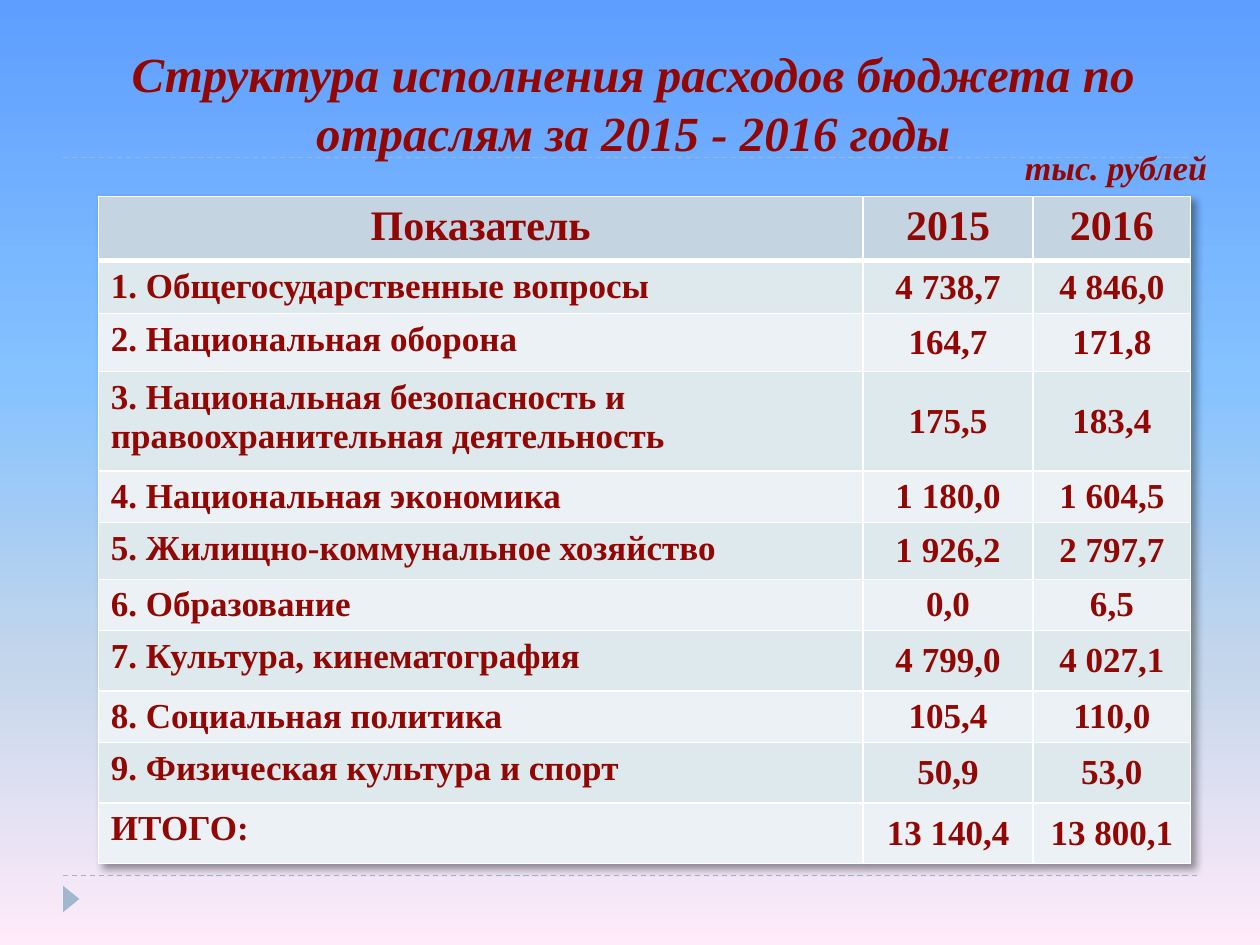
from lxml import etree
from pptx import Presentation
from pptx import util as u
from pptx.dml.color import RGBColor
from pptx.enum import dml, shapes, text
from pptx.oxml import ns

W, H = u.Inches(10), u.Inches(7.5)
FONT = "Times New Roman"
DARK_RED = RGBColor(0x92, 0x07, 0x04)
STEEL = RGBColor(0x9F, 0xB8, 0xCD)
WHITE = RGBColor(0xFF, 0xFF, 0xFF)
BLACK = RGBColor(0, 0, 0)
HEADER = RGBColor(0xC5, 0xD4, 0xE1)
BANDS = [RGBColor(0xEC, 0xF1, 0xF5), RGBColor(0xDD, 0xE9, 0xEC)]
SKY = [
    (0, RGBColor(0x5E, 0x9E, 0xFF)),
    (40, RGBColor(0x85, 0xC2, 0xFF)),
    (70, RGBColor(0xC4, 0xD6, 0xEB)),
    (100, RGBColor(0xFF, 0xEB, 0xFA)),
]
COLS = [6.07, 1.35, 1.25]
ROWS = [0.51, 0.42, 0.46, 0.79, 0.38, 0.45, 0.36, 0.48, 0.31, 0.48, 0.48]
BUDGET = [
    ("Показатель", "2015", "2016"),
    ("1. Общегосударственные вопросы", "4 738,7", "4 846,0"),
    ("2. Национальная оборона", "164,7", "171,8"),
    ("3. Национальная безопасность и правоохранительная деятельность", "175,5", "183,4"),
    ("4. Национальная экономика", "1 180,0", "1 604,5"),
    ("5. Жилищно-коммунальное хозяйство", "1 926,2", "2 797,7"),
    ("6. Образование", "0,0", "6,5"),
    ("7. Культура, кинематография", "4 799,0", "4 027,1"),
    ("8. Социальная политика", "105,4", "110,0"),
    ("9. Физическая культура и спорт", "50,9", "53,0"),
    ("ИТОГО:", "13 140,4", "13 800,1"),
]


def share(x, y, w, h):
    return int(W * x), int(H * y), int(W * w), int(H * h)


def sub(parent, tag, **attrs):
    return etree.SubElement(parent, ns.qn(tag), attrs)


def add_run(tf, words, size, align, italic=False):
    p = tf.paragraphs[0]
    p.alignment = align
    r = p.add_run()
    r.text = words
    f = r.font
    f.name, f.size, f.bold, f.italic = FONT, u.Pt(size), True, italic
    f.color.rgb = DARK_RED


def paint_background(s):
    fill = s.background.fill
    fill.gradient()
    fill.gradient_angle = 270
    stops = s.element.find(".//" + ns.qn("a:gsLst"))
    for gs in list(stops):
        stops.remove(gs)
    for pos, color in SKY:
        gs = sub(stops, "a:gs", pos=str(pos * 1000))
        sub(gs, "a:srgbClr", val=str(color))


def add_rule(s, box):
    x, y, w, h = box
    line = s.shapes.add_connector(shapes.MSO_CONNECTOR.STRAIGHT, x, y, x + w, y + h)
    line.line.color.rgb = STEEL
    line.line.width = u.Pt(0.75)
    line.line.dash_style = dml.MSO_LINE.DASH
    sub(line.element.spPr, "a:effectLst")


def add_marker(s, box):
    sp = s.shapes.add_shape(shapes.MSO_SHAPE.ISOSCELES_TRIANGLE, *box)
    sp.rotation = 90
    sp.shadow.inherit = False
    sp.fill.solid()
    sp.fill.fore_color.rgb = STEEL
    sp.line.fill.background()


def place_title(s, box):
    sp = s.shapes.title
    sp.left, sp.top, sp.width, sp.height = box
    s.shapes.element.append(sp.element)
    tf = sp.text_frame
    tf.word_wrap = True
    tf.auto_size = text.MSO_AUTO_SIZE.NONE
    tf.vertical_anchor = text.MSO_ANCHOR.BOTTOM
    add_run(tf, "Структура исполнения расходов бюджета по отраслям за 2015 - 2016 годы",
            28, text.PP_ALIGN.CENTER, italic=True)


def add_units(s, box):
    tf = s.shapes.add_textbox(*box).text_frame
    tf.word_wrap = True
    tf.vertical_anchor = text.MSO_ANCHOR.MIDDLE
    add_run(tf, "тыс. рублей", 19.5, text.PP_ALIGN.RIGHT, italic=True)


def set_borders(cell, header):
    tc_pr = cell._tc.get_or_add_tcPr()
    for i, side in enumerate("LRTB"):
        width = u.Pt(3 if header and side == "B" else 1)
        ln = etree.Element(ns.qn("a:ln" + side), w=str(int(width)))
        sub(sub(ln, "a:solidFill"), "a:srgbClr", val=str(WHITE))
        tc_pr.insert(i, ln)


def add_table_shadow(tbl):
    effects = etree.Element(ns.qn("a:effectLst"))
    shadow = sub(effects, "a:outerShdw", blurRad=str(u.Pt(4)), dist=str(u.Pt(4)),
                 dir="2700000", algn="tl", rotWithShape="0")
    sub(sub(shadow, "a:srgbClr", val=str(BLACK)), "a:alpha", val="40000")
    tbl.tblPr.insert(0, effects)


def add_budget_table(s, box):
    x, y, w, h = box
    frame = s.shapes.add_table(len(ROWS), len(COLS), x, y, w, h)
    table = frame.table
    add_table_shadow(table._tbl)
    for col, part in zip(table.columns, COLS):
        col.width = int(w * part / sum(COLS))
    for row, part in zip(table.rows, ROWS):
        row.height = int(h * part / sum(ROWS))
    for i, values in enumerate(BUDGET):
        for j, value in enumerate(values):
            cell = table.cell(i, j)
            header, number = i == 0, j > 0
            cell.fill.solid()
            cell.fill.fore_color.rgb = HEADER if header else BANDS[i % 2]
            set_borders(cell, header)
            if number and not header:
                cell.vertical_anchor = text.MSO_ANCHOR.MIDDLE
            align = text.PP_ALIGN.CENTER if header or number else text.PP_ALIGN.LEFT
            add_run(cell.text_frame, value, 24 if header else 20, align)


def main():
    prs = Presentation()
    prs.slide_width, prs.slide_height = W, H
    s = prs.slides.add_slide(prs.slide_layouts[5])
    paint_background(s)
    for y in (6.95, 1.25):
        add_rule(s, share(0.05, y / 7.5, 0.9, 0))
    add_marker(s, share(0.046, 7.07 / 7.5, 0.021, 0.13 / 7.5))
    place_title(s, share(0.055, 0.29 / 7.5, 0.895, 1.04 / 7.5))
    add_budget_table(s, share(0.078, 1.56 / 7.5, 0.867, sum(ROWS) / 7.5))
    add_units(s, share(0.789, 1.09 / 7.5, 0.179, 0.47 / 7.5))
    prs.save("out.pptx")


if __name__ == "__main__":
    main()
